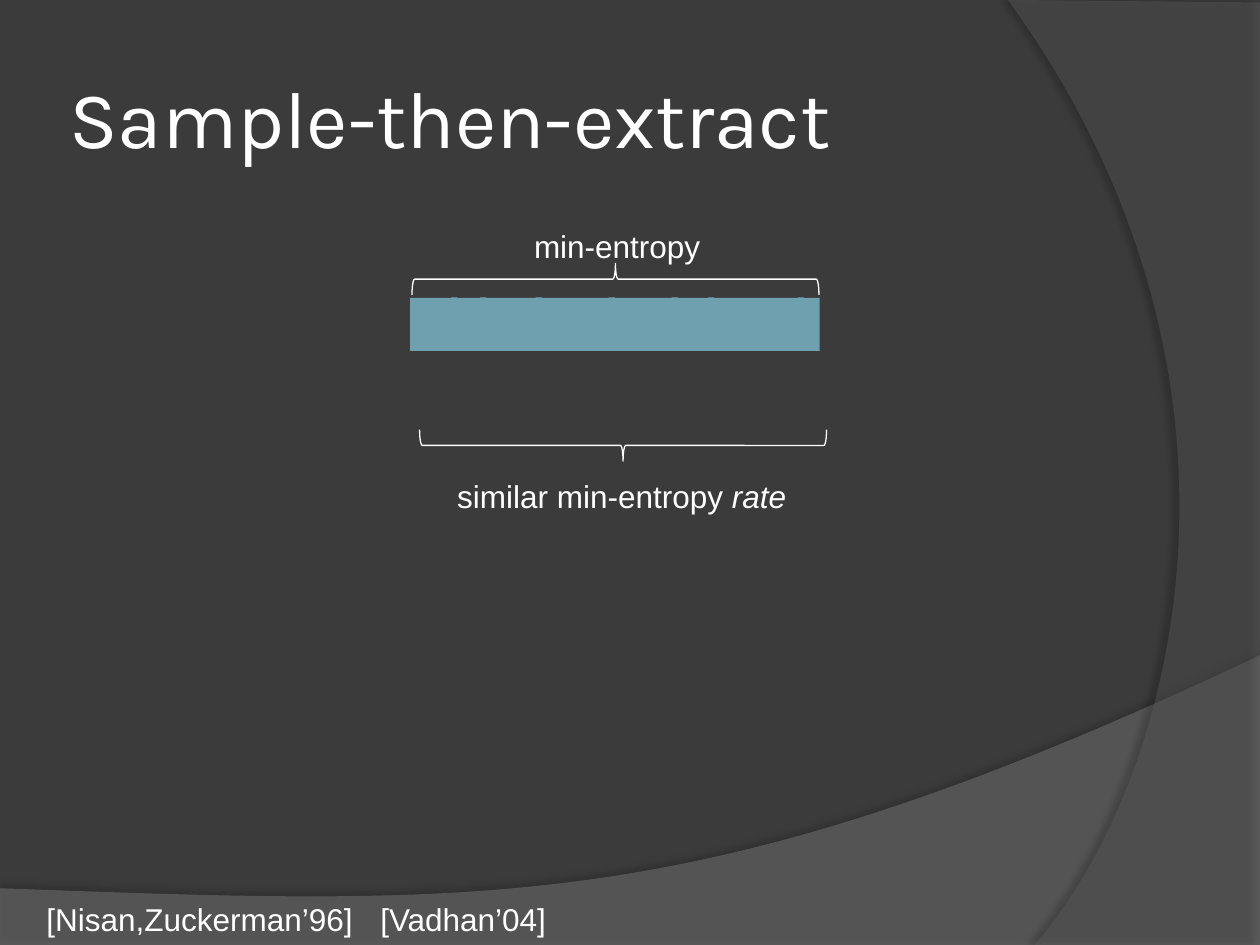
import pptx
import pptx.dml.color
import pptx.enum.shapes
import pptx.enum.text
import pptx.oxml
import pptx.oxml.ns
import pptx.util
from pptx.util import Inches

RGBColor = pptx.dml.color.RGBColor
SHAPES = pptx.enum.shapes.MSO_SHAPE
ANCHOR = pptx.enum.text.MSO_ANCHOR
AUTO_SIZE = pptx.enum.text.MSO_AUTO_SIZE
qn = pptx.oxml.ns.qn
NAMESPACE = pptx.oxml.ns.nsdecls("a")

BACKGROUND = RGBColor(0x3B, 0x3B, 0x3B)
LOWER_WAVE = RGBColor(0x7F, 0x7F, 0x7F)
RIGHT_WAVE = RGBColor(0x5E, 0x5E, 0x5E)
SOURCE_BLUE = RGBColor(0x6E, 0xA0, 0xB0)
WHITE = RGBColor(0xFF, 0xFF, 0xFF)

BLOCK_TOP, BLOCK_HEIGHT = 2.36, 0.42
SAMPLE_LEFTS = (3.58, 3.81, 4.25, 4.83, 5.33, 5.62, 6.33)
SAMPLE_WIDTH = 0.05


def add_wave(slide, corners, controls, color, opacity,
             shadow_opacity, distance, angle):
    """Add a translucent outline whose last drawn edge is a cubic curve.

    The curve joins the last two corners; opacities are in percent.
    """
    outline = [(Inches(x), Inches(y)) for x, y in corners]
    builder = slide.shapes.build_freeform(*outline[0])
    builder.add_line_segments(outline[1:], close=True)
    wave = builder.convert_to_shape()
    wave.fill.solid()
    wave.fill.fore_color.rgb = color
    wave.line.fill.background()
    wave.shadow.inherit = False

    curve_points = "".join(
        f'<a:pt x="{Inches(x) - wave.left}" y="{Inches(y) - wave.top}"/>'
        for x, y in (*controls, corners[-1])
    )
    last_edge = list(wave.element.iter(qn("a:lnTo")))[-1]
    last_edge.getparent().replace(last_edge, pptx.oxml.parse_xml(
        f"<a:cubicBezTo {NAMESPACE}>{curve_points}</a:cubicBezTo>"
    ))

    properties = wave.element.spPr
    fill_color = properties.find(qn("a:solidFill")).find(qn("a:srgbClr"))
    fill_color.append(pptx.oxml.parse_xml(
        f'<a:alpha {NAMESPACE} val="{opacity * 1000}"/>'
    ))
    properties.find(qn("a:effectLst")).append(pptx.oxml.parse_xml(
        f'<a:outerShdw {NAMESPACE} blurRad="{pptx.util.Pt(4)}" '
        f'dist="{pptx.util.Pt(distance)}" dir="{angle * 60000}" '
        'algn="ctr" rotWithShape="0"><a:srgbClr val="000000">'
        f'<a:alpha val="{shadow_opacity * 1000}"/></a:srgbClr></a:outerShdw>'
    ))


def add_text(slide, text, left, top, width, height=0.4, *, size=18, font="Arial",
             italic_end="", inset=None, anchor=ANCHOR.TOP, wrap=False):
    box = slide.shapes.add_textbox(
        Inches(left), Inches(top), Inches(width), Inches(height))
    frame = box.text_frame
    frame.word_wrap = wrap
    frame.auto_size = AUTO_SIZE.NONE if wrap else AUTO_SIZE.SHAPE_TO_FIT_TEXT
    frame.vertical_anchor = anchor
    if inset is not None:
        frame.margin_left = frame.margin_right = Inches(inset)
        frame.margin_top = frame.margin_bottom = Inches(inset)
    for content, italic in ((text, False), (italic_end, True)):
        if content:
            run = frame.paragraphs[0].add_run()
            run.text = content
            run.font.name = font
            run.font.size = pptx.util.Pt(size)
            run.font.italic = italic
            run.font.color.rgb = WHITE


def add_block(parent, left, top, width, height, rotation=0):
    block = parent.shapes.add_shape(
        SHAPES.RECTANGLE, Inches(left), Inches(top), Inches(width), Inches(height))
    block.rotation = rotation
    block.shadow.inherit = False
    block.fill.solid()
    block.fill.fore_color.rgb = SOURCE_BLUE
    block.line.fill.background()


def add_brace(slide, left, top, rotation):
    brace = slide.shapes.add_shape(
        SHAPES.RIGHT_BRACE, Inches(left), Inches(top), Inches(0.25), Inches(3.23))
    brace.rotation = rotation
    brace.shadow.inherit = False
    brace.fill.background()
    brace.line.color.rgb = WHITE
    brace.line.width = pptx.util.Pt(0.75)


def main():
    deck = pptx.Presentation()
    deck.slide_width, deck.slide_height = Inches(10), Inches(7.5)
    slide = deck.slides.add_slide(deck.slide_layouts[6])
    slide.background.fill.solid()
    slide.background.fill.fore_color.rgb = BACKGROUND

    add_wave(slide, [(0, 7.51), (10, 7.51), (10, 5.2), (0, 7.05)],
             [(5.59, 7.29), (3.91, 7.19)], LOWER_WAVE, 45, 35, 3.5, 270)
    add_wave(slide, [(10, 0.02), (10, 7.5), (8.21, 7.5), (8, 0)],
             [(9.35, 6.19), (10.18, 3)], RIGHT_WAVE, 40, 45, 4, 180)

    add_text(slide, "Sample-then-extract", 0.5, 0.3, 8.17, 1.25, size=46,
             font="Karla", inset=0.05, anchor=ANCHOR.MIDDLE, wrap=True)
    add_text(slide, "[Nisan,Zuckerman’96]", 0.27, 7.09, 2.66)
    add_text(slide, "[Vadhan’04]", 2.92, 7.09, 1.53)

    add_block(slide, 4.67, 0.95, BLOCK_HEIGHT, 3.25, rotation=90)
    add_text(slide, "min-entropy", 4.14, 1.75, 1.53)
    add_brace(slide, 4.76, 0.6, 270)
    samples = slide.shapes.add_group_shape()
    for sample_left in SAMPLE_LEFTS:
        add_block(samples, sample_left, BLOCK_TOP, SAMPLE_WIDTH, BLOCK_HEIGHT)
    add_text(slide, "similar min-entropy ", 3.53, 3.74, 2.84, italic_end="rate")
    add_brace(slide, 4.82, 1.92, 90)

    deck.save("out.pptx")


if __name__ == "__main__":
    main()
